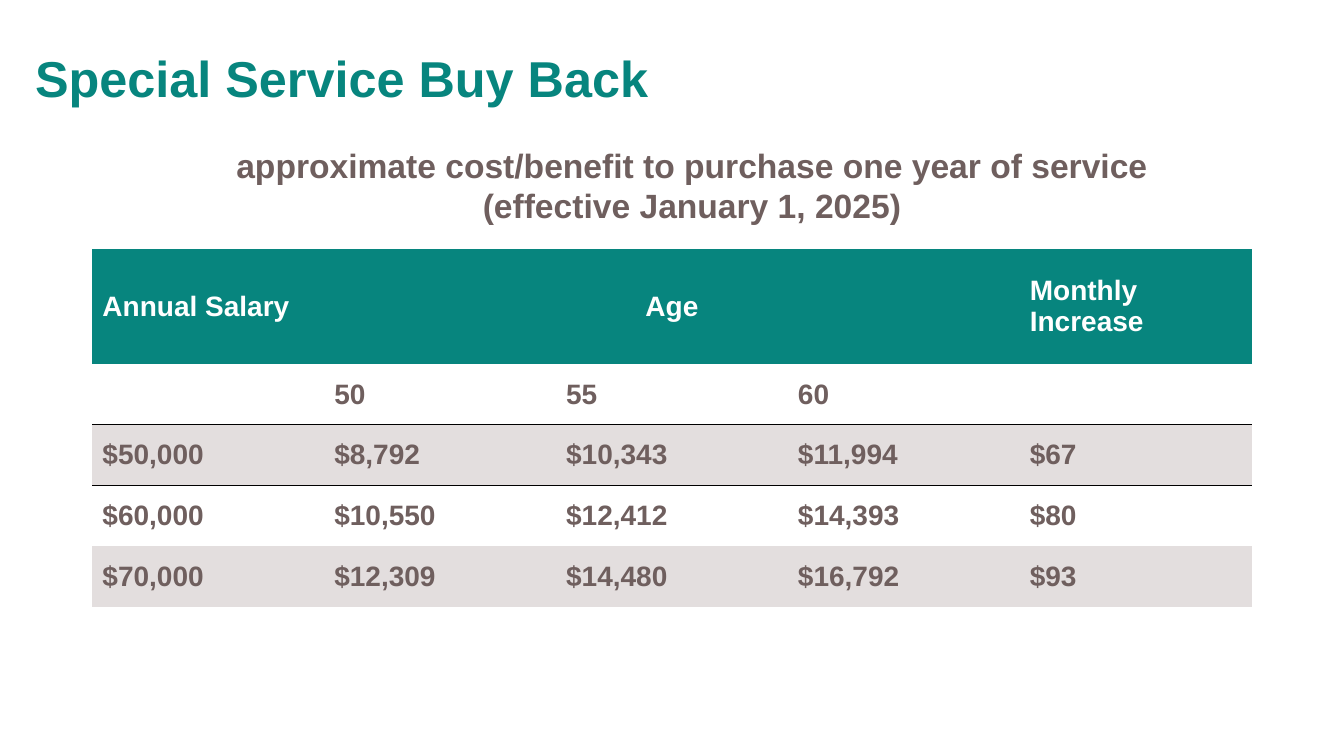
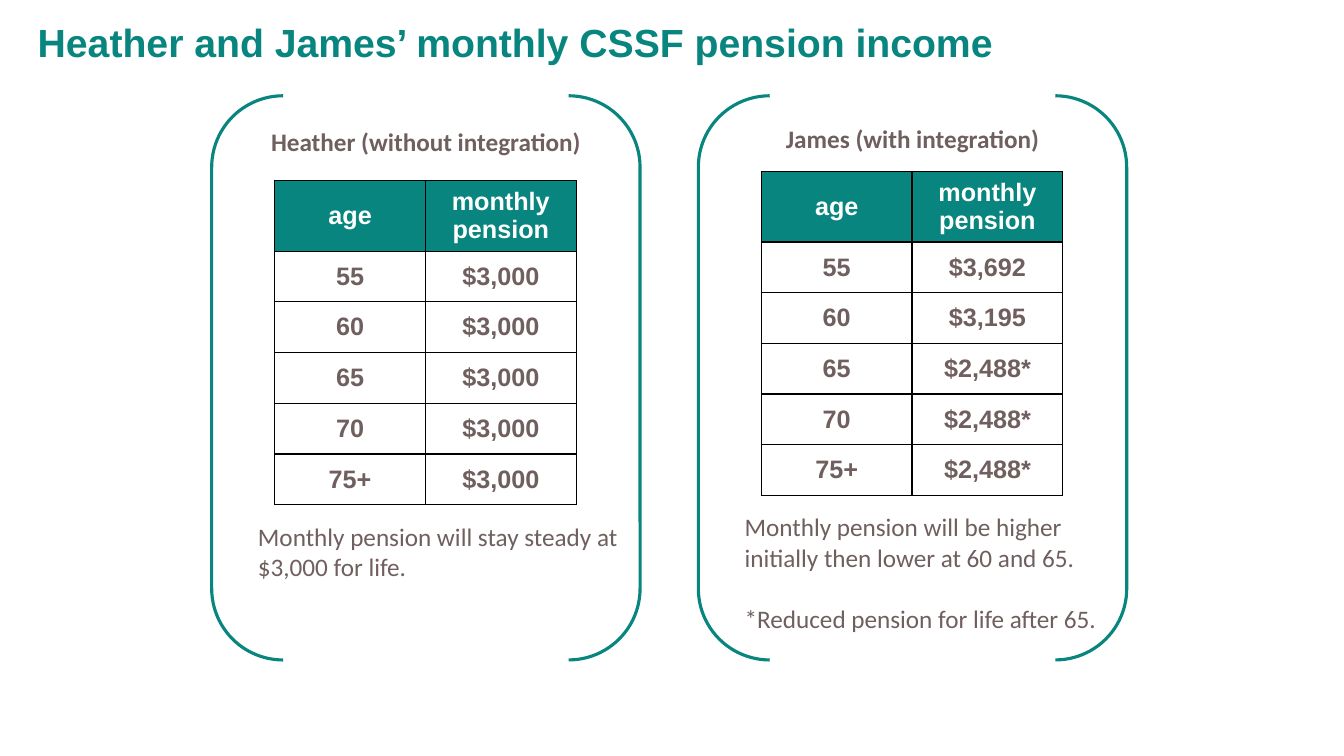
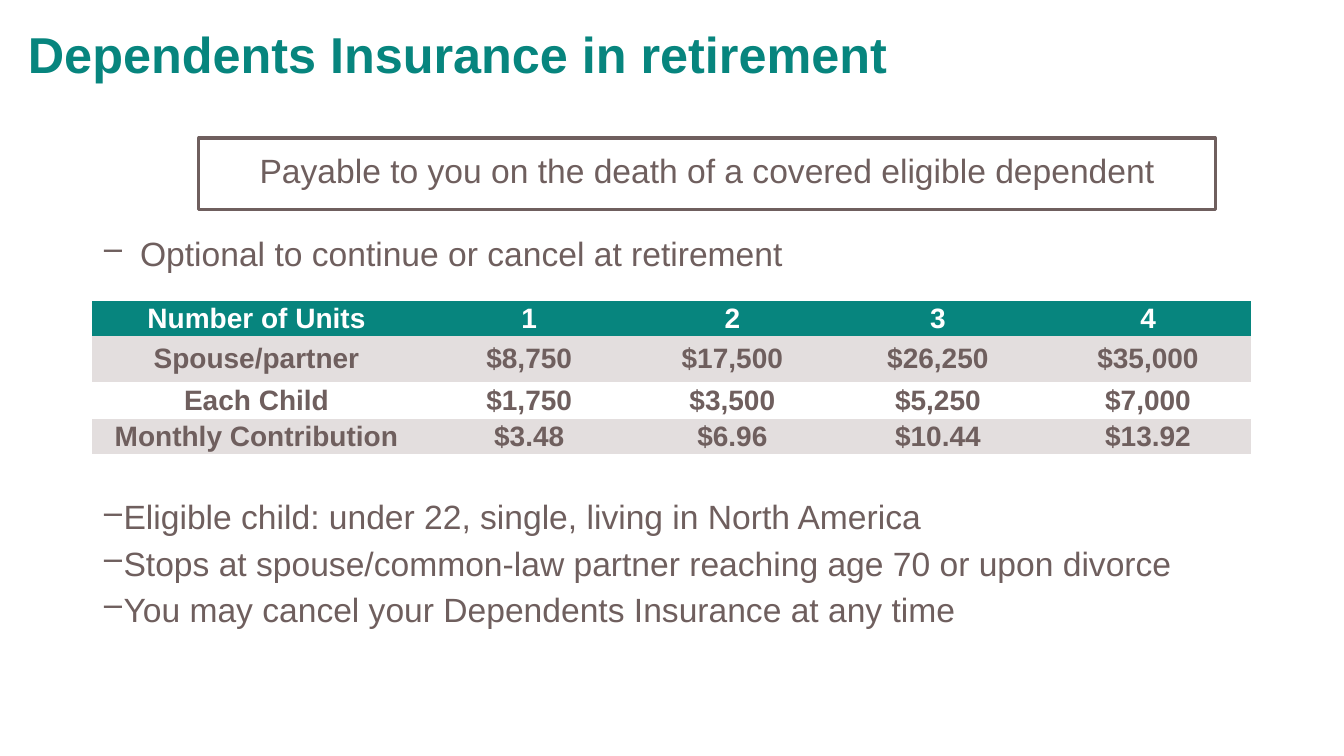
import pptx
import pptx.dml.color
import pptx.enum.shapes
import pptx.enum.text
import pptx.oxml
import pptx.oxml.ns
import pptx.util

Pt = pptx.util.Pt
RGBColor = pptx.dml.color.RGBColor
ALIGN = pptx.enum.text.PP_ALIGN
ANCHOR = pptx.enum.text.MSO_ANCHOR
SHAPE = pptx.enum.shapes.MSO_SHAPE
qn = pptx.oxml.ns.qn

# Shared look
TEAL = RGBColor(0x07, 0x85, 0x7E)
BROWN = RGBColor(0x6F, 0x5F, 0x5E)
PALE = RGBColor(0xE3, 0xDE, 0xDE)
WHITE = RGBColor(0xFF, 0xFF, 0xFF)
BLACK = RGBColor(0, 0, 0)
PLAIN = "{2D5ABB26-0587-4C30-8999-92F81FD0307C}"  # table style without grid
LEFT, WIDE = 66, 828


def write(frame, text, size=24, color=BROWN, bold=False, font="Arial",
          align=ALIGN.LEFT, anchor=ANCHOR.TOP, line=None, gap=0,
          bullet=None, indent=0):
    """Fill a text frame; each line of text is a paragraph."""
    frame.word_wrap = True
    frame.vertical_anchor = anchor
    for i, words in enumerate(text.split("\n")):
        para = frame.add_paragraph() if i else frame.paragraphs[0]
        if bullet:
            props = para._p.get_or_add_pPr()
            props.set("marL", str(Pt(indent)))
            props.set("indent", str(-Pt(indent)))
            mark = pptx.oxml.parse_xml(
                f'<a:buChar {pptx.oxml.ns.nsdecls("a")} char="{bullet}"/>')
            props.append(mark)
        para.alignment = align
        if line:
            para.line_spacing = line
        if i and gap:
            para.space_before = Pt(gap)
        run = para.add_run()
        run.text = words
        run.font.size = Pt(size)
        run.font.bold = bold
        run.font.name = font
        run.font.color.rgb = color


def place(slide, at, text, **form):
    box = slide.shapes.add_textbox(*map(Pt, at))
    write(box.text_frame, text, **form)


def title(slide, at, text, size=36, **form):
    place(slide, at, text, size=size, color=TEAL, bold=True, line=0.9,
          anchor=ANCHOR.MIDDLE, **form)


def outline(slide, kind, at, color):
    shape = slide.shapes.add_shape(kind, *map(Pt, at))
    shape.shadow.inherit = False
    shape.fill.background()
    shape.line.color.rgb = color
    shape.line.width = Pt(2.25)
    return shape


def border(cell, sides):
    """Draw thin black edges; sides come in the order L, R, T, B."""
    props = cell._tc.get_or_add_tcPr()
    for side in sides:
        props.append(pptx.oxml.parse_xml(
            f'<a:ln{side} {pptx.oxml.ns.nsdecls("a")} w="{Pt(1)}"><a:solidFill>'
            f'<a:srgbClr val="{BLACK}"/></a:solidFill></a:ln{side}>'))


def grid(slide, spot, cols, rows, data, size=20, align=ALIGN.LEFT,
         bands=(), edges=None, inset=None):
    """Add a table with a teal head; bands are shaded rows, edges maps row to sides."""
    frame = slide.shapes.add_table(len(rows), len(cols), *map(Pt, spot),
                                   Pt(sum(cols)), Pt(sum(rows)))
    table = frame.table
    table._tbl.tblPr.find(qn("a:tableStyleId")).text = PLAIN
    table.horz_banding = False
    for col, width in zip(table.columns, cols):
        col.width = Pt(width)
    for r, (high, line) in enumerate(zip(rows, data)):
        table.rows[r].height = Pt(high)
        for c, text in enumerate(line):
            cell = table.cell(r, c)
            if inset:
                (cell.margin_left, cell.margin_top,
                 cell.margin_right, cell.margin_bottom) = map(Pt, inset)
            border(cell, (edges or {}).get(r, ""))
            if r == 0 or r in bands:
                cell.fill.solid()
                cell.fill.fore_color.rgb = PALE if r else TEAL
            else:
                cell.fill.background()
            cell.vertical_anchor = ANCHOR.MIDDLE
            if text:
                write(cell.text_frame, text, size=size, bold=True, align=align,
                      color=BROWN if r else WHITE, anchor=ANCHOR.MIDDLE)
    return table


def buyback(slide):
    title(slide, (18, 16, 828, 84), "Special Service Buy Back")
    data = [
        ("Annual Salary", "Age", "", "", "Monthly Increase"),
        ("", "50", "55", "60", ""),
        ("$50,000", "$8,792", "$10,343", "$11,994", "$67"),
        ("$60,000", "$10,550", "$12,412", "$14,393", "$80"),
        ("$70,000", "$12,309", "$14,480", "$16,792", "$93"),
    ]
    table = grid(slide, (LEFT, 178), [WIDE / 5] * 5, [82] + [43.4] * 4, data,
                 bands=(2, 4), edges={1: "B", 2: "T"})
    age = table.cell(0, 1)
    age.merge(table.cell(0, 3))
    age.text_frame.paragraphs[0].alignment = ALIGN.CENTER
    place(slide, (152.6, 100, 683.3, 65.5),
          "approximate cost/benefit to purchase one year of service\n"
          "(effective January 1, 2025)", bold=True, align=ALIGN.CENTER)


def person(slide, left, top, name, sums, note):
    """Bracketed panel: name, pension table and note; top is the table's top."""
    outline(slide, SHAPE.DOUBLE_BRACKET, (left, 68.4, 306, 403), TEAL)
    place(slide, (left, 44 + top / 3, 306, 30), name, size=18, bold=True,
          font="Calibri", align=ALIGN.CENTER)
    ages = ("55", "60", "65", "70", "75+")
    grid(slide, (left + 45, top), [107.7] * 2, [50] + [36.2] * 5,
         [("age", "monthly pension"), *zip(ages, sums)], size=18,
         align=ALIGN.CENTER, edges={r: "LRTB" for r in range(6)})
    place(slide, (left + 26, top + 239.6, 280, 100), note, size=18,
          font="Calibri", gap=22)


def pension(slide):
    title(slide, (0, 10, 736, 44),
          "Heather and James’ monthly CSSF pension income",
          size=28, align=ALIGN.CENTER)
    person(slide, 151.2, 129, "Heather (without integration)", ["$3,000"] * 5,
           "Monthly pension will stay steady at $3,000 for life.")
    person(slide, 498.8, 122.4, "James (with integration)",
           ["$3,692", "$3,195"] + ["$2,488*"] * 3,
           "Monthly pension will be higher initially then lower at 60 and 65.\n"
           "*Reduced pension for life after 65.")


def cover(slide):
    title(slide, (0, 2, 654, 78), "Dependents Insurance in retirement",
          align=ALIGN.CENTER)
    data = [
        ("Number of Units", "1", "2", "3", "4"),
        ("Spouse/partner", "$8,750", "$17,500", "$26,250", "$35,000"),
        ("Each Child", "$1,750", "$3,500", "$5,250", "$7,000"),
        ("Monthly Contribution", "$3.48", "$6.96", "$10.44", "$13.92"),
    ]
    grid(slide, (LEFT, 215), [237.6, 152, 138.2, 155.5, 144.7],
         [23.6, 33.2, 26, 25], data, align=ALIGN.CENTER, bands=(1, 3),
         inset=(0.5, 0.5, 3.6, 0.5))
    dash = dict(bullet="‒", line=0.8)
    place(slide, (LEFT, 356.5, WIDE, 150),
          "Eligible child: under 22, single, living in North America\n"
          "Stops at spouse/common-law partner reaching age 70 or upon divorce\n"
          "You may cancel your Dependents Insurance at any time",
          gap=10, **dash)
    place(slide, (LEFT, 168.5, 648, 32),
          "Optional to continue or cancel at retirement", indent=27, **dash)
    frame = outline(slide, SHAPE.RECTANGLE, (142, 98.6, 726, 51), BROWN)
    write(frame.text_frame,
          "Payable to you on the death of a covered eligible dependent",
          align=ALIGN.CENTER, anchor=ANCHOR.MIDDLE, line=0.8)


def main():
    deck = pptx.Presentation()
    deck.slide_width, deck.slide_height = Pt(960), Pt(540)
    for build in (buyback, pension, cover):
        build(deck.slides.add_slide(deck.slide_layouts[6]))
    deck.save("out.pptx")


if __name__ == "__main__":
    main()
